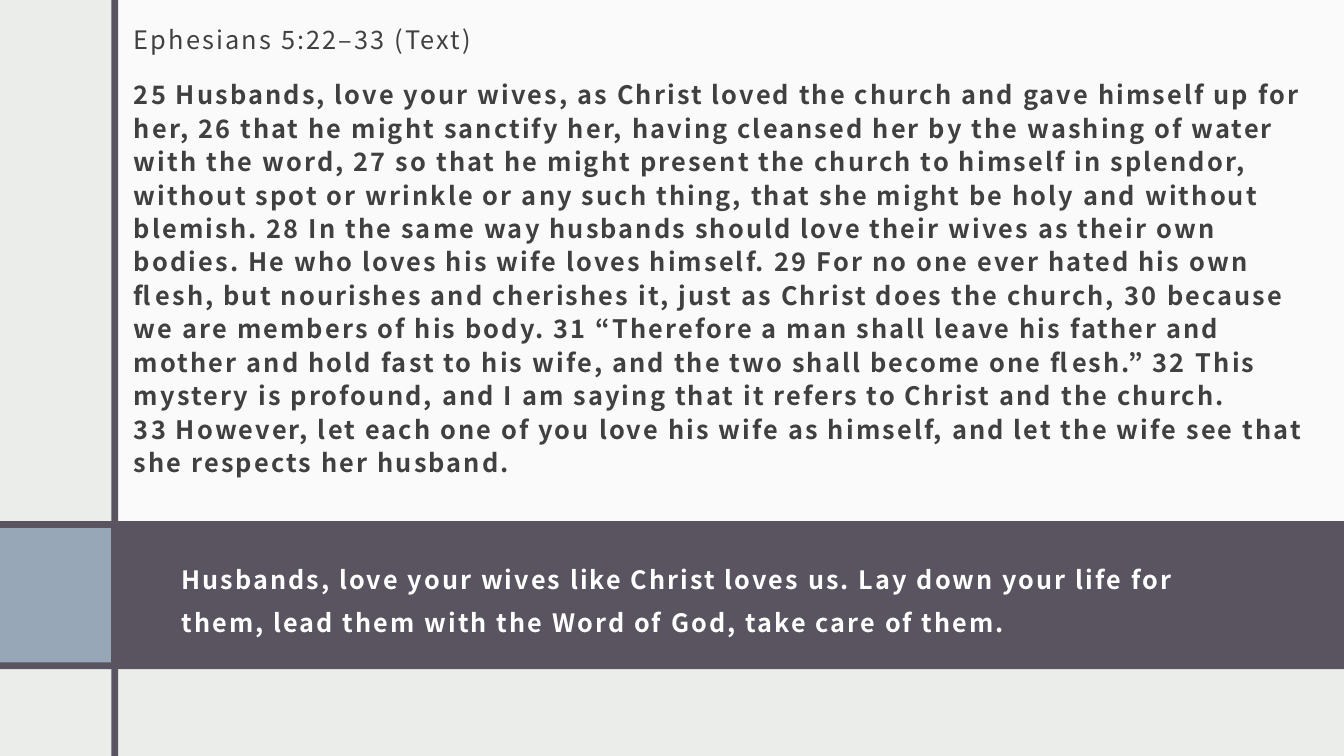
"""Build the Ephesians 5:22–33 slide: scripture passage above a takeaway band."""
import pptx
import pptx.util
import pptx.dml.color
import pptx.enum.shapes
import pptx.enum.text
import pptx.oxml.ns
import lxml.etree

Pt = pptx.util.Pt
PLUM = "595460"
WIDTH, HEIGHT = 960, 540
HARD_SPACE = chr(160)


def paint(colour_format, hex_colour):
    colour_format.rgb = pptx.dml.color.RGBColor.from_string(hex_colour)


def write(paragraph, text, line_pitch, colour, font_format):
    paragraph.alignment = pptx.enum.text.PP_ALIGN.LEFT
    paragraph.line_spacing = Pt(line_pitch)
    properties = paragraph._p.get_or_add_pPr()
    properties.set("marL", "0")
    properties.set("indent", "0")
    lxml.etree.SubElement(properties, pptx.oxml.ns.qn("a:buNone"))
    run = paragraph.add_run()
    run.text = text
    for attribute, value in font_format.items():
        setattr(run.font, attribute, value)
    paint(run.font.color, colour)
    run._r.get_or_add_rPr().set("spc", "150")


presentation = pptx.Presentation()
presentation.slide_width = Pt(WIDTH)
presentation.slide_height = Pt(HEIGHT)
slide = presentation.slides.add_slide(presentation.slide_layouts[1])
slide.background.fill.solid()
paint(slide.background.fill.fore_color, "EBEDEB")

panels = [
    (82, 0, WIDTH - 82, 372.5, "FFFFFF", 75),
    (0, 372.2, WIDTH, 105.8, PLUM, 100),
    (0, 377.3, 79.2, 95.8, "97A7B8", 100),
    (79.5, 0, 5, HEIGHT, PLUM, 100),
]
for left, top, width, height, colour, opacity in panels:
    panel = slide.shapes.add_shape(
        pptx.enum.shapes.MSO_SHAPE.RECTANGLE, Pt(left), Pt(top), Pt(width), Pt(height))
    panel.shadow.inherit = False
    panel.line.fill.background()
    panel.fill.solid()
    paint(panel.fill.fore_color, colour)
    if opacity < 100:
        swatch = panel._element.spPr.find(".//" + pptx.oxml.ns.qn("a:srgbClr"))
        lxml.etree.SubElement(swatch, pptx.oxml.ns.qn("a:alpha"), val=str(opacity * 1000))

takeaway = slide.shapes.title
passage = slide.placeholders[1]
anchors = pptx.enum.text.MSO_ANCHOR
areas = [
    (takeaway, (121, 383.8, 788.4, 81.4), anchors.MIDDLE, 7.2),
    (passage, (87.1, 0, 861.8, 370), anchors.TOP, 15.3),
]
for area, (left, top, width, height), anchor, top_inset in areas:
    placement = {"left": left, "top": top, "width": width, "height": height}
    for attribute, value in placement.items():
        setattr(area, attribute, Pt(value))
    frame_format = {
        "word_wrap": True,
        "auto_size": pptx.enum.text.MSO_AUTO_SIZE.NONE,
        "vertical_anchor": anchor,
        "margin_left": Pt(8.6),
        "margin_right": Pt(8.6),
        "margin_top": Pt(top_inset),
        "margin_bottom": Pt(7.2),
    }
    for attribute, value in frame_format.items():
        setattr(area.text_frame, attribute, value)
    slide.shapes._spTree.append(area._element)

bold_font = {"name": "Noto Sans CJK JP", "size": Pt(18), "bold": True}
verse_font = {**bold_font, "size": Pt(18.1)}
reference_font = {**verse_font, "bold": False}

write(
    takeaway.text_frame.paragraphs[0],
    "Husbands, love your wives like Christ loves us. Lay down your life for "
    "them, lead them with the Word of God, take care of them.",
    30.7, "FFFFFF", bold_font)

reference = passage.text_frame.paragraphs[0]
reference.space_before = Pt(0)
reference.space_after = Pt(6)
write(reference, "Ephesians 5:22–33 (Text)", 23.9, "404040", reference_font)

verses = [
    (25, "Husbands, love your wives, as Christ loved the church and gave himself up for her,"),
    (26, "that he might sanctify her, having cleansed her by the washing of water with the word,"),
    (27, "so that he might present the church to himself in splendor, without spot or wrinkle "
         "or any such thing, that she might be holy and without blemish."),
    (28, "In the same way husbands should love their wives as their own bodies. "
         "He who loves his wife loves himself."),
    (29, "For no one ever hated his own flesh, but nourishes and cherishes it, "
         "just as Christ does the church,"),
    (30, "because we are members of his body."),
    (31, "“Therefore a man shall leave his father and mother and hold fast to his wife, "
         "and the two shall become one flesh.”"),
    (32, "This mystery is profound, and I am saying that it refers to Christ and the church."),
    (33, "However, let each one of you love his wife as himself, "
         "and let the wife see that she respects her husband."),
]
scripture = passage.text_frame.add_paragraph()
scripture.space_before = Pt(9.3)
scripture.space_after = Pt(6)
write(scripture, " ".join(f"{number}{HARD_SPACE}{verse}" for number, verse in verses),
      23.9, "404040", verse_font)

presentation.save("out.pptx")
